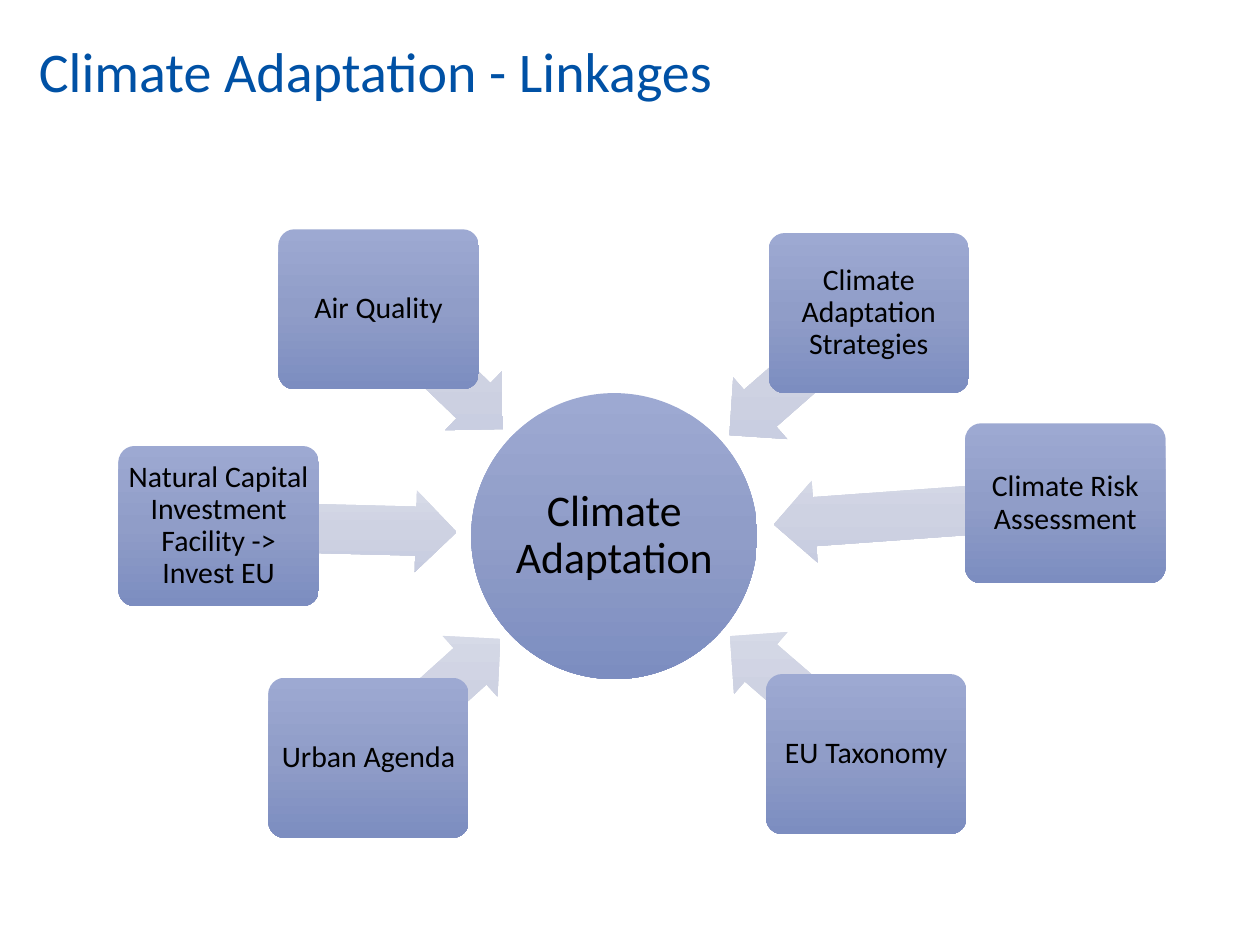
import math
from lxml import etree
from pptx import Presentation
from pptx.dml import color
from pptx.enum import shapes, text
from pptx.oxml import ns
from pptx.util import Inches, Pt

# Content
TITLE = "Climate Adaptation - Linkages"
HUB = "Climate Adaptation"
# Topic, card left, card top, arrow length (inches)
TOPICS = [
    ("Urban Agenda", 2.13, 5.38, 1.41),
    ("Natural Capital Investment Facility -> Invest EU", 0.94, 3.54, 1.89),
    ("Air Quality", 2.21, 1.82, 1.37),
    ("Climate Adaptation Strategies", 6.1, 1.85, 1.47),
    ("Climate Risk Assessment", 7.66, 3.36, 2.32),
    ("EU Taxonomy", 6.08, 5.35, 1.43),
]

THEME = {
    "font": "Calibri",
    "title": {"size": 32, "color": "0051A5"},
    "hub": {"size": 25, "color": "000000"},
    "topic": {"size": 17, "color": "000000"},
    "solid": [(0, "9DA9D2"), (50, "909DC8"), (100, "7C8DC0")],
    "pale": [(0, "D9DCE9"), (50, "CED2E2"), (100, "C7CCE0")],
}

# Geometry (inches)
HUB_X, HUB_Y, HUB_SIZE = 3.74, 3.12, 2.27
CARD_W, CARD_H = 1.59, 1.27
ARROW_H = 0.65


def write(frame, words, style, inset_x, inset_y, anchor, align):
    margins = {"margin_left": inset_x, "margin_right": inset_x,
               "margin_top": inset_y, "margin_bottom": inset_y}
    for name, value in margins.items():
        setattr(frame, name, Inches(value))
    frame.word_wrap = True
    frame.vertical_anchor = anchor
    paragraph = frame.paragraphs[0]
    paragraph.alignment = align
    paragraph.line_spacing = 0.9
    run = paragraph.add_run()
    run.text = words
    for name, value in {"name": THEME["font"], "size": Pt(style["size"])}.items():
        setattr(run.font, name, value)
    run.font.color.rgb = color.RGBColor.from_string(style["color"])


def add_part(slide, preset, box, stops, adjustments=()):
    part = slide.shapes.add_shape(preset, *map(Inches, box))
    part.shadow.inherit = False
    part.line.fill.background()
    for i, value in enumerate(adjustments):
        part.adjustments[i] = value
    # Three-stop gradient, top to bottom whatever the rotation
    part.fill.gradient()
    grad = part.fill._fill._gradFill
    grad.set("rotWithShape", "0")
    for child in list(grad):
        grad.remove(child)
    stop_list = etree.SubElement(grad, ns.qn("a:gsLst"))
    for position, rgb in stops:
        stop = etree.SubElement(stop_list, ns.qn("a:gs"), pos=str(position * 1000))
        etree.SubElement(stop, ns.qn("a:srgbClr"), val=rgb)
    etree.SubElement(grad, ns.qn("a:lin"), ang="5400000", scaled="0")
    return part


def add_arrow(slide, card_x, card_y, length):
    """Arrow from a card's centre towards the hub's centre."""
    start_x, start_y = card_x + CARD_W / 2, card_y + CARD_H / 2
    angle = math.atan2(HUB_Y + HUB_SIZE / 2 - start_y, HUB_X + HUB_SIZE / 2 - start_x)
    mid_x = start_x + math.cos(angle) * length / 2
    mid_y = start_y + math.sin(angle) * length / 2
    box = (mid_x - length / 2, mid_y - ARROW_H / 2, length, ARROW_H)
    arrow = add_part(slide, shapes.MSO_SHAPE.LEFT_ARROW, box, THEME["pale"], (0.6, 0.5))
    arrow.rotation = (math.degrees(angle) + 180) % 360


def main():
    deck = Presentation()
    deck.slide_width, deck.slide_height = Inches(10), Inches(7.5)
    slide = deck.slides.add_slide(deck.slide_layouts[6])
    middle, center = text.MSO_ANCHOR.MIDDLE, text.PP_ALIGN.CENTER

    # Title
    title = slide.shapes.add_textbox(*map(Inches, (0.21, 0.3, 8.62, 1.16)))
    write(title.text_frame, TITLE, THEME["title"], 0.1, 0.05,
          text.MSO_ANCHOR.TOP, text.PP_ALIGN.LEFT)

    # Hub
    hub = add_part(slide, shapes.MSO_SHAPE.OVAL,
                   (HUB_X, HUB_Y, HUB_SIZE, HUB_SIZE), THEME["solid"])
    write(hub.text_frame, HUB, THEME["hub"], 0.02, 0.02, middle, center)

    # Topics, each card covering the tail of its arrow
    for topic, left, top, arrow_length in TOPICS:
        add_arrow(slide, left, top, arrow_length)
        card = add_part(slide, shapes.MSO_SHAPE.ROUNDED_RECTANGLE,
                        (left, top, CARD_W, CARD_H), THEME["solid"], (0.1,))
        write(card.text_frame, topic, THEME["topic"], 0.04, 0.04, middle, center)

    deck.save("out.pptx")


if __name__ == "__main__":
    main()
